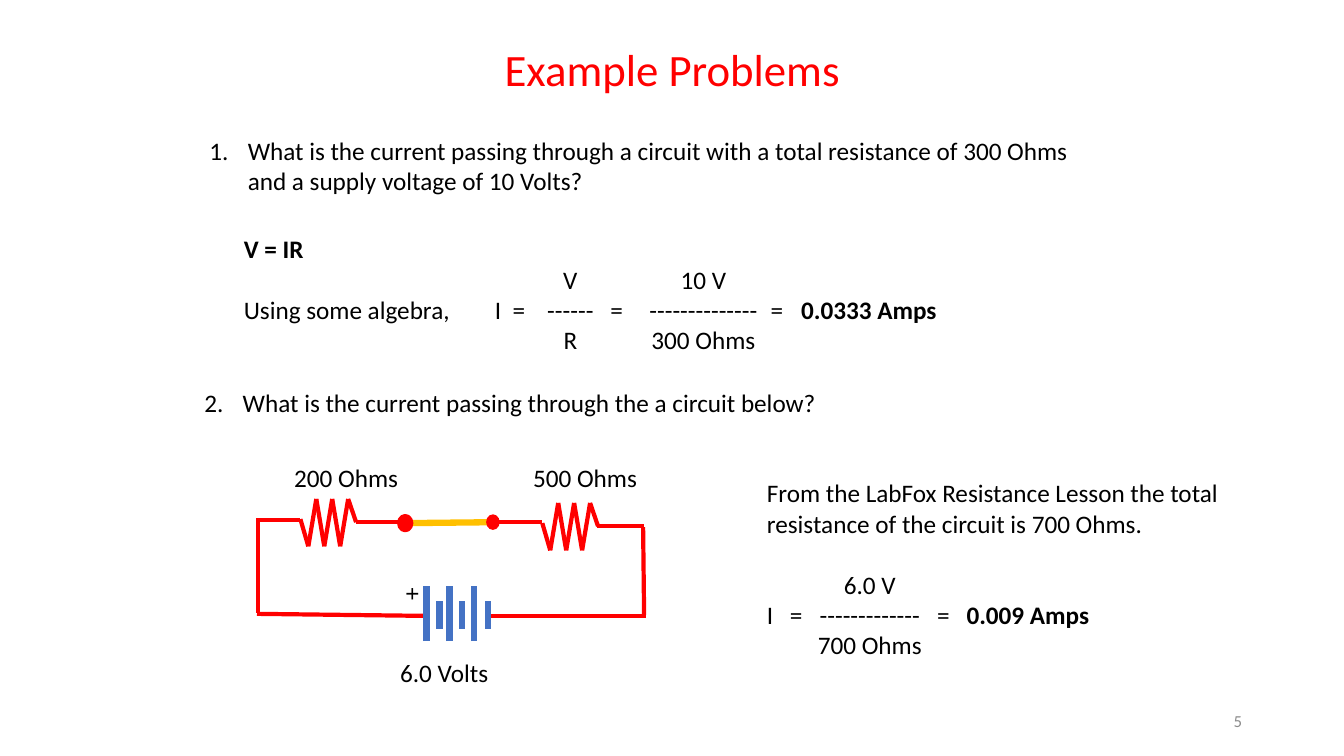
from pptx import Presentation
from pptx import util as u
from pptx.dml.color import RGBColor
from pptx.enum import shapes, text
from pptx.oxml.ns import qn
from lxml import etree

COLORS = {"red": "FF0000", "black": "000000", "grey": "8C8C8C",
          "switch": "FFC000", "battery": "4472C4"}
CELL = u.Inches(0.1)  # grid of 133.33 columns by 75 rows

deck = Presentation()
deck.slide_width, deck.slide_height = int(133.33 * CELL), 75 * CELL
slide = deck.slides.add_slide(deck.slide_layouts[6])


def write(box, lines, size=18, color="black", align="LEFT", anchor="TOP",
          number=None, spacing=None, rotation=0):
    """Each line is (runs, tab stops, space before); a run is (words, bold)."""
    label = slide.shapes.add_textbox(*(int(n * CELL) for n in box))
    label.rotation = rotation
    frame = label.text_frame
    frame.word_wrap = True
    frame.vertical_anchor = getattr(text.MSO_ANCHOR, anchor)
    if isinstance(lines, str):
        lines = [([(lines, False)], [], 0)]
    for i, (runs, stops, before) in enumerate(lines):
        para = frame.add_paragraph() if i else frame.paragraphs[0]
        para.alignment = getattr(text.PP_ALIGN, align)
        para.space_before = u.Pt(before)
        if spacing:
            para.line_spacing = spacing
        props = para._p.get_or_add_pPr()
        if number:
            props.set("marL", str(int(3.8 * CELL)))
            props.set("indent", str(int(-3.8 * CELL)))
            etree.SubElement(props, qn("a:buAutoNum"), type="arabicPeriod",
                             startAt=str(number))
        if stops:
            tabs = etree.SubElement(props, qn("a:tabLst"))
            for column, kind in stops:
                etree.SubElement(tabs, qn("a:tab"), pos=str(int(column * CELL)), algn=kind)
        for words, bold in runs:
            run = para.add_run()
            run.text = words
            run.font.name, run.font.size, run.font.bold = "Calibri", u.Pt(size), bold
            run.font.color.rgb = RGBColor.from_string(COLORS[color])


def wire(points, color="red", width=3):
    """Joins neighbouring grid points with straight lines."""
    for start, end in zip(points, points[1:]):
        line = slide.shapes.add_connector(
            shapes.MSO_CONNECTOR.STRAIGHT, *(int(n * CELL) for n in (*start, *end)))
        line.line.color.rgb = RGBColor.from_string(COLORS[color])
        line.line.width = u.Pt(width)
        etree.SubElement(line._element.spPr, qn("a:effectLst"))


# Title and first question
write((21.7, 4.4, 90, 5.8), "Example Problems", size=32, color="red",
      align="CENTER", anchor="MIDDLE", spacing=0.8)
write((19.8, 12.9, 90, 7.1), "What is the current passing through a circuit with a total "
      "resistance of 300 Ohms and a supply voltage of 10 Volts?", number=1)

# First solution: fractions centred on tab stops
fractions = [(32.4, "ctr"), (45.6, "ctr")]
equation = [(24.9, "l"), (27.3, "ctr"), fractions[0], (37, "ctr"),
            fractions[1], (52.9, "ctr"), (55.3, "l")]
write((23.2, 22.7, 90, 13.1), [
    ([("V = IR", True)], [], 0),
    ([("\tV\t10 V", False)], fractions, 0),
    ([("Using some algebra,\tI\t=\t------\t=\t--------------\t=\t", False),
      ("0.0333 Amps", True)], equation, 0),
    ([("\tR\t300 Ohms", False)], fractions, 0)])

# Second question
write((19.3, 37.9, 90, 4), "What is the current passing through the a circuit below?", number=2)

# Switch and its leads
wire([(40.3, 51.9), (49.5, 51.8)], "switch", 4.5)
wire([(35.3, 51.8), (39.6, 51.8)])
wire([(49.5, 51.8), (53.8, 51.8)])

# Resistors: zigzags at an equal step
for left, middle in ((29.8, 51.8), (53.8, 52.2)):
    offsets = [-0.3, 2.4, -2.3, 2.4, -2.3, 2.4, -2.3, 0]
    wire([(left + 0.79 * i, middle + dy) for i, dy in enumerate(offsets)])

# Switch terminals
for left, top, outline in ((39.6, 51.2, 3), (48.3, 51.1, 1)):
    terminal = slide.shapes.add_shape(
        shapes.MSO_SHAPE.OVAL, *(int(n * CELL) for n in (left, top, 1.2, 1.4)))
    terminal.shadow.inherit = False
    terminal.fill.solid()
    terminal.fill.fore_color.rgb = RGBColor.from_string(COLORS["red"])
    terminal.line.color.rgb = RGBColor.from_string(COLORS["red"])
    terminal.line.width = u.Pt(outline)

# Outer wires
wire([(25.5, 51.6), (29.8, 51.6)])
wire([(25.6, 51.4), (25.6, 60.8)])
wire([(42.1, 61.1), (25.5, 60.9)])
wire([(59.2, 52.2), (63.9, 52.2)])
wire([(63.8, 52.3), (63.9, 61)])
wire([(48.4, 61.1), (64.1, 61.1)])

# Battery: long and short plates
for columns, top, bottom in (((42.3, 44.6, 47), 58.1, 63.6), ((43.6, 45.8, 48.4), 59.6, 62.4)):
    for column in columns:
        wire([(column, bottom), (column, top)], "battery", 4.5)

# Circuit labels
write((28.2, 45.4, 14.2, 4), "200 Ohms")
write((51.9, 45.4, 14.8, 4), "500 Ohms")
write((38.7, 64.7, 14.8, 4), "6.0 Volts")
write((37.8, 55.9, 5.6, 3.8), "+", rotation=270)

# Second solution
fraction = (10.2, "ctr")
write((75.1, 46.9, 50.9, 19.2), [
    ([("From the LabFox Resistance Lesson the total resistance of the circuit "
       "is 700 Ohms.", False)], [], 0),
    ([("\t6.0 V", False)], [fraction], 22),
    ([("I\t=\t-------------\t=\t", False), ("0.009 Amps", True)],
     [(2.9, "ctr"), fraction, (17.5, "ctr"), (19.8, "l")], 0),
    ([("\t700 Ohms", False)], [fraction], 0)])

# Page number
write((94.2, 69.5, 30, 4), "5", size=12, color="grey", align="RIGHT", anchor="MIDDLE")

deck.save("out.pptx")
